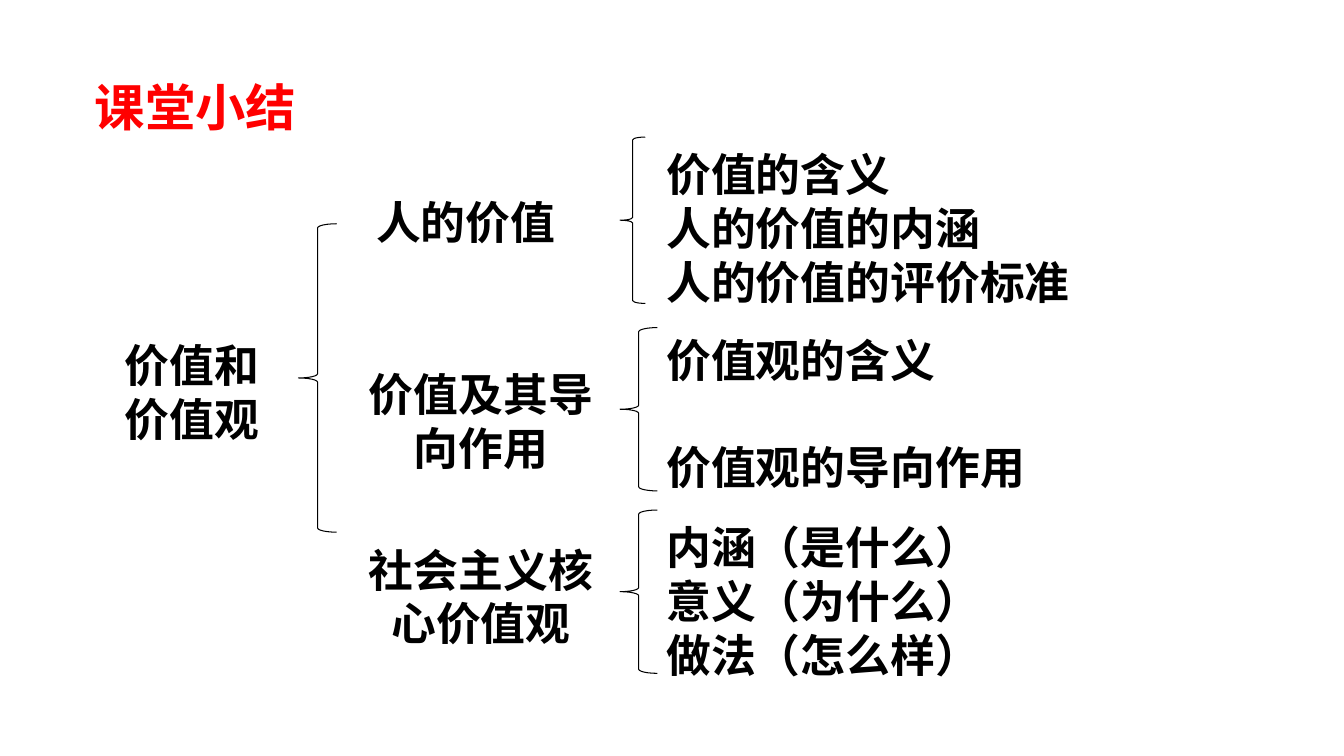
from pptx import Presentation
from pptx import util as u
from pptx.dml.color import RGBColor
from pptx.enum import shapes, text
from pptx.oxml.ns import qn
from lxml import etree

FONT = "Noto Sans CJK SC"
COLORS = {"title": "FF0000", "ink": "000000"}
LINE_RATIO = 1.2

presentation = Presentation()
presentation.slide_width = u.Inches(13.33)
presentation.slide_height = u.Inches(7.5)
slide = presentation.slides.add_slide(presentation.slide_layouts[6])


def add_text(lines, box, size=32, color="ink", align=text.PP_ALIGN.LEFT, skipped_lines=0):
    """Add one paragraph per line; skipped_lines is the gap between them, in lines."""
    shape = slide.shapes.add_textbox(*map(u.Inches, box))
    frame = shape.text_frame
    frame.word_wrap = True
    frame.auto_size = text.MSO_AUTO_SIZE.SHAPE_TO_FIT_TEXT
    frame.margin_top, frame.margin_bottom = u.Inches(0.1), 0
    for index, line in enumerate(lines):
        paragraph = frame.paragraphs[0] if index == 0 else frame.add_paragraph()
        paragraph.alignment = align
        paragraph.line_spacing = u.Pt(size * LINE_RATIO)
        if index and skipped_lines:
            paragraph.space_before = u.Pt(size * LINE_RATIO * skipped_lines)
        run = paragraph.add_run()
        run.text = line
        run.font.size = u.Pt(size)
        run.font.bold = True
        run.font.name = FONT
        run.font.color.rgb = RGBColor.from_string(COLORS[color])
        east_asian = etree.SubElement(run.font._element, qn("a:ea"))
        east_asian.set("typeface", FONT)


def add_brace(left, top, width, height):
    brace = slide.shapes.add_shape(
        shapes.MSO_SHAPE.LEFT_BRACE, *map(u.Inches, (left, top, width, height)))
    brace.adjustments[0] = 0.11
    brace.shadow.inherit = False
    brace.fill.background()
    brace.line.color.rgb = RGBColor.from_string(COLORS["ink"])
    brace.line.width = u.Pt(0.75)


TOPIC_LEFT, TOPIC_WIDTH = 3.39, 2.76
BRACE_LEFT, POINTS_LEFT = 6.15, 6.51

add_text(["课堂小结"], (0.84, 0.66, 2.5, 0.71), size=36, color="title")
add_text(["价值和", "价值观"], (0.84, 3.25, 2.13, 1.17), align=text.PP_ALIGN.CENTER)
add_brace(2.96, 2.22, 0.38, 3.06)

# topic, its left, top and width; brace top, width and height; points, their top, width and gap
branches = [
    ("人的价值", (3.09, 1.83, 3.06), (1.36, 0.25, 1.65),
     ["价值的含义", "人的价值的内涵", "人的价值的评价标准"], (1.36, 5.27), 0),
    ("价值及其导向作用", (TOPIC_LEFT, 3.54, TOPIC_WIDTH), (3.25, 0.37, 1.62),
     ["价值观的含义", "价值观的导向作用"], (3.2, 3.97), 1),
    ("社会主义核心价值观", (TOPIC_LEFT, 5.28, TOPIC_WIDTH), (5.06, 0.37, 1.62),
     ["内涵（是什么）", "意义（为什么）", "做法（怎么样）"], (5.06, 3.97), 0),
]
for topic, topic_box, brace_box, points, (points_top, points_width), gap in branches:
    topic_height = 0.63 if len(topic) <= 5 else 1.17
    add_text([topic], (*topic_box, topic_height), align=text.PP_ALIGN.CENTER)
    add_brace(BRACE_LEFT, *brace_box)
    add_text(points, (POINTS_LEFT, points_top, points_width, 1.7), skipped_lines=gap)

presentation.save("out.pptx")
